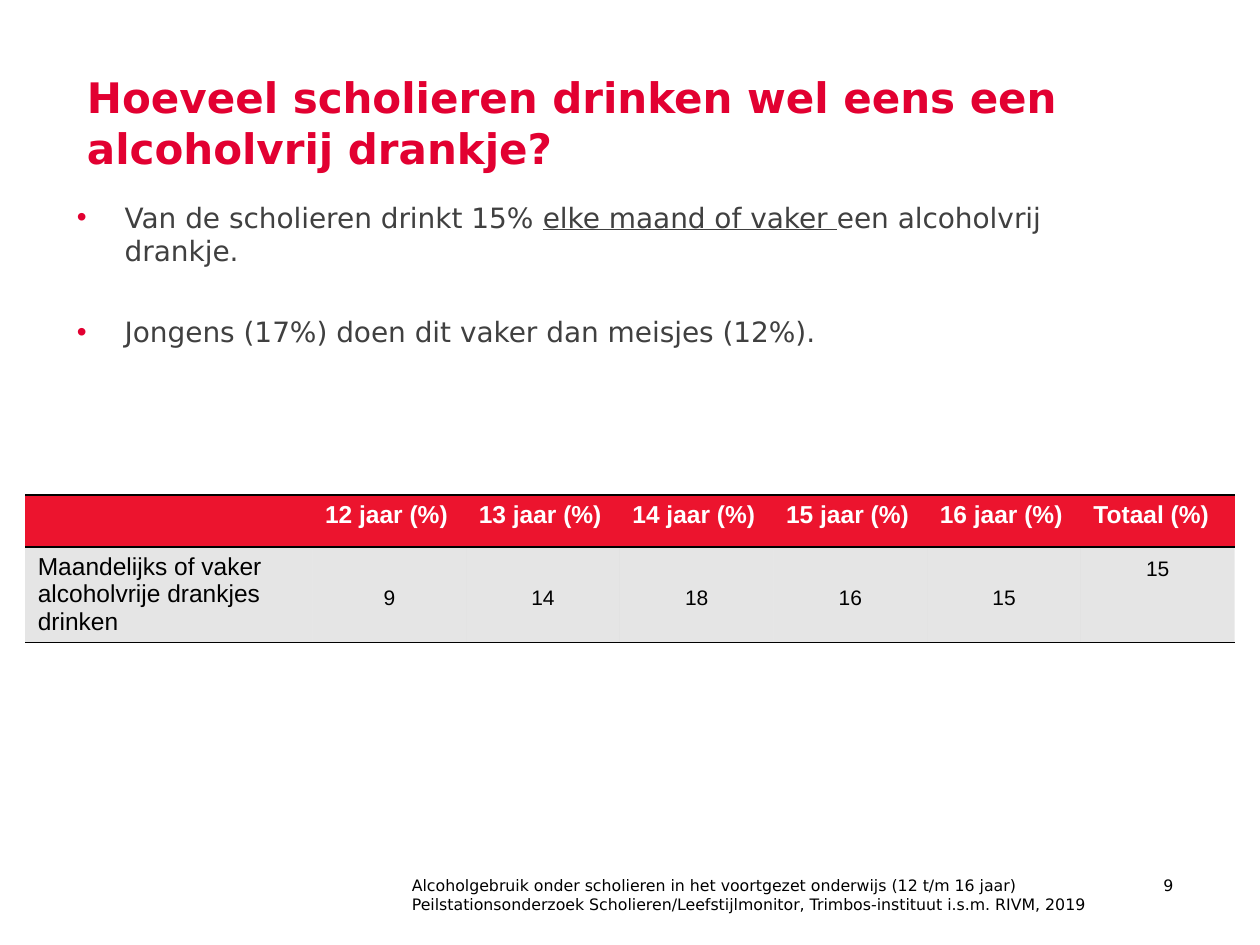
from lxml import etree
from pptx import Presentation
from pptx.dml.color import RGBColor
from pptx.enum.text import MSO_ANCHOR, PP_ALIGN
from pptx.oxml.ns import qn
from pptx.util import Inches, Pt

LEFT, CENTER, RIGHT = PP_ALIGN.LEFT, PP_ALIGN.CENTER, PP_ALIGN.RIGHT
TOP, MIDDLE = MSO_ANCHOR.TOP, MSO_ANCHOR.MIDDLE
COLUMNS, ROWS = 100, 75
PLAIN_TABLE = "{2D5ABB26-0587-4C30-8999-92F81FD0307C}"
COLORS = {"accent": "E20031", "header": "EC142E", "cell": "808080",
          "body": "404040", "black": "000000", "white": "FFFFFF"}
FORMATS = {
    "title": {"name": "DejaVu Sans", "size": Pt(24), "bold": True, "color": "accent"},
    "body": {"name": "DejaVu Sans", "size": Pt(16), "color": "body"},
    "footer": {"name": "DejaVu Sans", "size": Pt(9), "color": "black"},
    "header": {"name": "Arial", "size": Pt(14), "bold": True, "color": "white"},
    "label": {"name": "Arial", "size": Pt(14), "bold": False, "color": "black"},
    "value": {"name": "Arial", "size": Pt(12), "bold": False, "color": "black"},
}


def set_values(target, values):
    for name, value in values.items():
        setattr(target, name, value)


class SlideBuilder:
    """Places elements on a grid of 100 columns by 75 rows."""

    def __init__(self, presentation):
        self.column = presentation.slide_width / COLUMNS
        self.row = presentation.slide_height / ROWS
        self.slide = presentation.slides.add_slide(presentation.slide_layouts[1])

    def area(self, left, top, width, height):
        return (round(left * self.column), round(top * self.row),
                round(width * self.column), round(height * self.row))

    def move(self, shape, area):
        set_values(shape, dict(zip(("left", "top", "width", "height"), self.area(*area))))

    def style(self, font, style, **extra):
        values = {**FORMATS[style], **extra}
        font.color.rgb = RGBColor.from_string(COLORS[values.pop("color")])
        set_values(font, values)

    def add_run(self, paragraph, text, style, alignment=LEFT, **extra):
        paragraph.alignment = alignment
        run = paragraph.add_run()
        run.text = text
        self.style(run.font, style, **extra)

    def title(self, area, text):
        shape = self.slide.shapes.title
        self.move(shape, area)
        shape.text_frame.vertical_anchor = TOP
        self.add_run(shape.text_frame.paragraphs[0], text, "title")

    def bullets(self, area, items, gap):
        shape = self.slide.placeholders[1]
        self.move(shape, area)
        frame = shape.text_frame
        for index, parts in enumerate(items):
            paragraph = frame.add_paragraph() if index else frame.paragraphs[0]
            self.bullet(paragraph)
            paragraph.space_before = gap if index else Pt(0)
            for text, underline in parts:
                self.add_run(paragraph, text, "body", underline=underline)

    def bullet(self, paragraph):
        properties = paragraph._p.get_or_add_pPr()
        indent = Inches(0.38)
        properties.set("marL", str(indent))
        properties.set("indent", str(-indent))
        color = etree.SubElement(properties, qn("a:buClr"))
        etree.SubElement(color, qn("a:srgbClr"), val=COLORS["accent"])
        etree.SubElement(properties, qn("a:buChar"), char="•")

    def text(self, area, lines, alignment=LEFT):
        frame = self.slide.shapes.add_textbox(*self.area(*area)).text_frame
        frame.word_wrap = True
        for index, line in enumerate(lines):
            paragraph = frame.add_paragraph() if index else frame.paragraphs[0]
            self.add_run(paragraph, line, "footer", alignment)

    def table(self, area, widths, heights, header, values):
        shape = self.slide.shapes.add_table(2, len(widths), *self.area(*area))
        table = shape.table
        set_values(table, {"first_row": False, "horz_banding": False})
        table._tbl.tblPr.find(qn("a:tableStyleId")).text = PLAIN_TABLE
        for column, width in zip(table.columns, widths):
            column.width = round(width * self.column)
        for row, height in zip(table.rows, heights):
            row.height = round(height * self.row)
        for index, (heading, value) in enumerate(zip(header, values)):
            self.cell(table.cell(0, index), heading, "header", "header")
            cell = table.cell(1, index)
            if index == 0:
                self.cell(cell, value, "label", "cell", alpha=20)
                continue
            self.cell(cell, value, "value", "cell", CENTER, alpha=20)
            is_total = index == len(values) - 1
            side = Inches(0.07 if is_total else 0.01)
            set_values(cell, {
                "margin_left": side, "margin_right": side,
                "margin_top": Inches(0.06), "margin_bottom": 0,
                "vertical_anchor": TOP if is_total else MIDDLE})
            if is_total:
                cell.text_frame.paragraphs[0].line_spacing = 1.15

    def cell(self, cell, text, style, fill, alignment=LEFT, alpha=None):
        paragraph = cell.text_frame.paragraphs[0]
        if text:
            self.add_run(paragraph, text, style, alignment)
        properties = cell._tc.get_or_add_tcPr()
        for side in ("a:lnT", "a:lnB"):
            line = etree.SubElement(properties, qn(side), w=str(Pt(1)))
            solid = etree.SubElement(line, qn("a:solidFill"))
            etree.SubElement(solid, qn("a:srgbClr"), val=COLORS["black"])
        cell.fill.solid()
        cell.fill.fore_color.rgb = RGBColor.from_string(COLORS[fill])
        if alpha:
            color = properties.find(qn("a:solidFill")).find(qn("a:srgbClr"))
            etree.SubElement(color, qn("a:alpha"), val=str(alpha * 1000))


def main():
    presentation = Presentation()
    set_values(presentation, {"slide_width": Inches(10), "slide_height": Inches(7.5)})
    builder = SlideBuilder(presentation)

    # Title and findings
    builder.title((5.9, 5.2, 88.2, 12.6),
                  "Hoeveel scholieren drinken wel eens een alcoholvrij drankje?")
    builder.bullets((5.1, 15.4, 88.2, 16.3), [
        [("Van de scholieren drinkt 15% ", False), ("elke maand of vaker ", True),
         ("een alcoholvrij drankje.", False)],
        [("Jongens (17%) doen dit vaker dan meisjes (12%).", False)],
    ], gap=Pt(27))

    # Percentages by age
    ages = [f"{age} jaar (%)" for age in range(12, 17)]
    builder.table((2, 39.3, 96, 11.7), [22.8] + [12.2] * 6, [4.1, 7.6],
                  ["", *ages, "Totaal (%)"],
                  ["Maandelijks of vaker alcoholvrije drankjes drinken",
                   "9", "14", "18", "16", "15", "15"])

    # Source and page number
    builder.text((31.7, 69, 58.8, 4), [
        "Alcoholgebruik onder scholieren in het voortgezet onderwijs (12 t/m 16 jaar)",
        "Peilstationsonderzoek Scholieren/Leefstijlmonitor, Trimbos-instituut i.s.m. RIVM, 2019"])
    builder.text((86.2, 69, 7.9, 4), ["9"], RIGHT)

    presentation.save("out.pptx")


if __name__ == "__main__":
    main()
